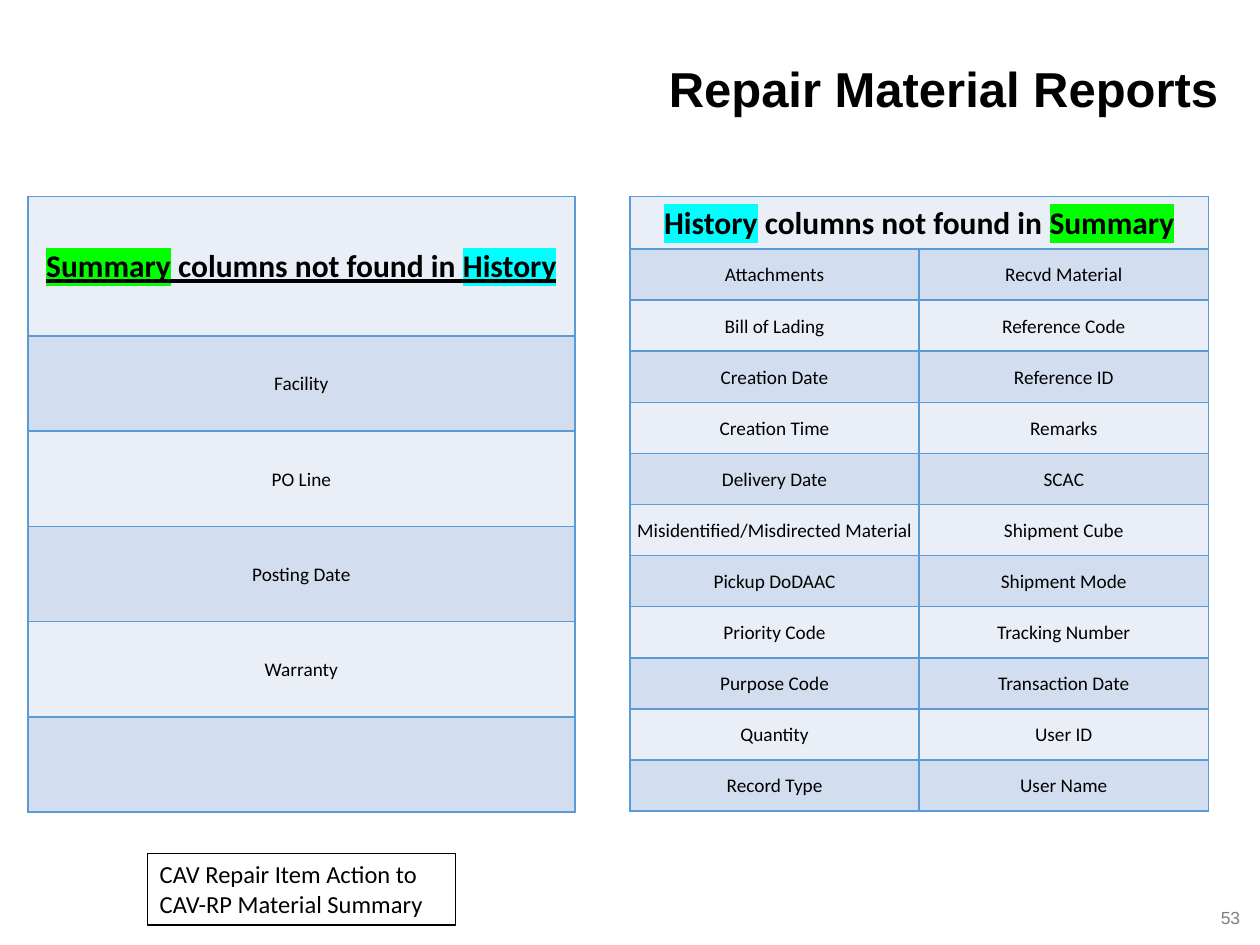
"""Build the Repair Material Reports slide with its two column-comparison tables."""
from lxml.etree import SubElement
from pptx import Presentation
from pptx.dml.color import RGBColor
from pptx.enum.shapes import MSO_SHAPE as SHAPE
from pptx.enum.text import MSO_ANCHOR as ANCHOR, PP_ALIGN as ALIGN
from pptx.oxml import parse_xml
from pptx.oxml.ns import nsdecls, qn
from pptx.util import Cm, Pt

BLACK = RGBColor(0, 0, 0)
GRAY = RGBColor(0x7F, 0x7F, 0x7F)
BLUE = RGBColor(0x5B, 0x9B, 0xD5)
BANDS = [RGBColor(0xEA, 0xEF, 0xF7), RGBColor(0xD2, 0xDE, 0xEF)]
MARKS = {"Summary": RGBColor(0, 0xFF, 0), "History": RGBColor(0, 0xFF, 0xFF)}

TITLE = "Repair Material Reports"
NOTE = "CAV Repair Item Action to CAV-RP Material Summary"
NUMBER = "53"
HEADING = " columns not found in "
TABLES = [
    {
        "heading": ["History", HEADING, "Summary"], "underline": False,
        "left": 12.7, "width": 11.66, "head_height": 1.06, "row_height": 1.03,
        "rows": [
            ("Attachments", "Recvd Material"),
            ("Bill of Lading", "Reference Code"),
            ("Creation Date", "Reference ID"),
            ("Creation Time", "Remarks"),
            ("Delivery Date", "SCAC"),
            ("Misidentified/Misdirected Material", "Shipment Cube"),
            ("Pickup DoDAAC", "Shipment Mode"),
            ("Priority Code", "Tracking Number"),
            ("Purpose Code", "Transaction Date"),
            ("Quantity", "User ID"),
            ("Record Type", "User Name"),
        ],
    },
    {
        "heading": ["Summary", HEADING, "History"], "underline": True,
        "left": 0.56, "width": 11.03, "head_height": 2.81, "row_height": 1.92,
        "rows": [("Facility",), ("PO Line",), ("Posting Date",), ("Warranty",), ("",)],
    },
]
TABLE_TOP = 3.96


def style(r, size, name="Calibri", color=BLACK, bold=False):
    r.font.size, r.font.name, r.font.bold = Pt(size), name, bold
    r.font.color.rgb = color


def highlight(r, color):
    mark = parse_xml(f'<a:highlight {nsdecls("a")}><a:srgbClr val="{color}"/></a:highlight>')
    r.font._element.find(qn("a:solidFill")).addnext(mark)


def format_cell(cell, fill):
    cell.vertical_anchor = ANCHOR.MIDDLE
    cell.margin_left = cell.margin_right = cell.margin_top = Cm(0.03)
    cell.margin_bottom = 0
    cell.fill.solid()
    cell.fill.fore_color.rgb = fill
    tc_pr = cell._tc.get_or_add_tcPr()
    for i, side in enumerate("LRTB"):
        tc_pr.insert(i, parse_xml(
            f'<a:ln{side} {nsdecls("a")} w="{Pt(1)}"><a:solidFill>'
            f'<a:srgbClr val="{BLUE}"/></a:solidFill></a:ln{side}>'))


def add_heading(cell, parts, underline):
    p = cell.text_frame.paragraphs[0]
    p.alignment = ALIGN.CENTER
    for part in parts:
        r = p.add_run()
        r.text = part
        style(r, 18, bold=True)
        r.font.underline = underline
        if part in MARKS:
            highlight(r, MARKS[part])


def add_report_table(s, data):
    rows = data["rows"]
    n_cols = len(rows[0])
    heights = [data["head_height"]] + [data["row_height"]] * len(rows)
    table = s.shapes.add_table(len(heights), n_cols, Cm(data["left"]), Cm(TABLE_TOP),
                               Cm(data["width"]), Cm(sum(heights))).table
    table.first_row = table.horz_banding = False
    for col in table.columns:
        col.width = Cm(data["width"] / n_cols)
    for i, height in enumerate(heights):
        table.rows[i].height = Cm(height)
        for cell in table.rows[i].cells:
            format_cell(cell, BANDS[i % 2])
    if n_cols > 1:
        table.cell(0, 0).merge(table.cell(0, n_cols - 1))
    add_heading(table.cell(0, 0), data["heading"], data["underline"])
    for i, row in enumerate(rows, 1):
        for j, text in enumerate(row):
            if text:
                p = table.cell(i, j).text_frame.paragraphs[0]
                p.text = text
                p.alignment = ALIGN.CENTER
                style(p.runs[0], 11)


def add_title(s):
    sp = s.shapes.title
    sp.left, sp.top, sp.width, sp.height = Cm(2.92), Cm(0), Cm(21.89), Cm(3.68)
    tf = sp.text_frame
    tf.text = TITLE
    tf.vertical_anchor = ANCHOR.MIDDLE
    p = tf.paragraphs[0]
    p.alignment, p.line_spacing = ALIGN.RIGHT, 0.9
    style(p.runs[0], 28, "Arial", bold=True)


def add_note(s):
    sp = s.shapes.add_shape(SHAPE.RECTANGLE, Cm(2.97), Cm(17.2), Cm(6.22), Cm(1.45))
    sp.shadow.inherit = False
    sp.fill.background()
    sp.line.color.rgb, sp.line.width = BLACK, Pt(0.75)
    tf = sp.text_frame
    tf.word_wrap, tf.vertical_anchor = True, ANCHOR.TOP
    tf.text = NOTE
    p = tf.paragraphs[0]
    p.alignment = ALIGN.LEFT
    style(p.runs[0], 14)


def add_number(s):
    tf = s.shapes.add_textbox(Cm(23.98), Cm(18.16), Cm(1.27), Cm(0.69)).text_frame
    tf.word_wrap = True
    tf.text = NUMBER
    p = tf.paragraphs[0]
    p.alignment = ALIGN.RIGHT
    style(p.runs[0], 10, "Arial", GRAY)


def main():
    prs = Presentation()
    prs.slide_width, prs.slide_height = Cm(25.4), Cm(19.05)
    s = prs.slides.add_slide(prs.slide_layouts[5])
    add_title(s)
    for data in TABLES:
        add_report_table(s, data)
    add_note(s)
    add_number(s)
    prs.save("out.pptx")


if __name__ == "__main__":
    main()
